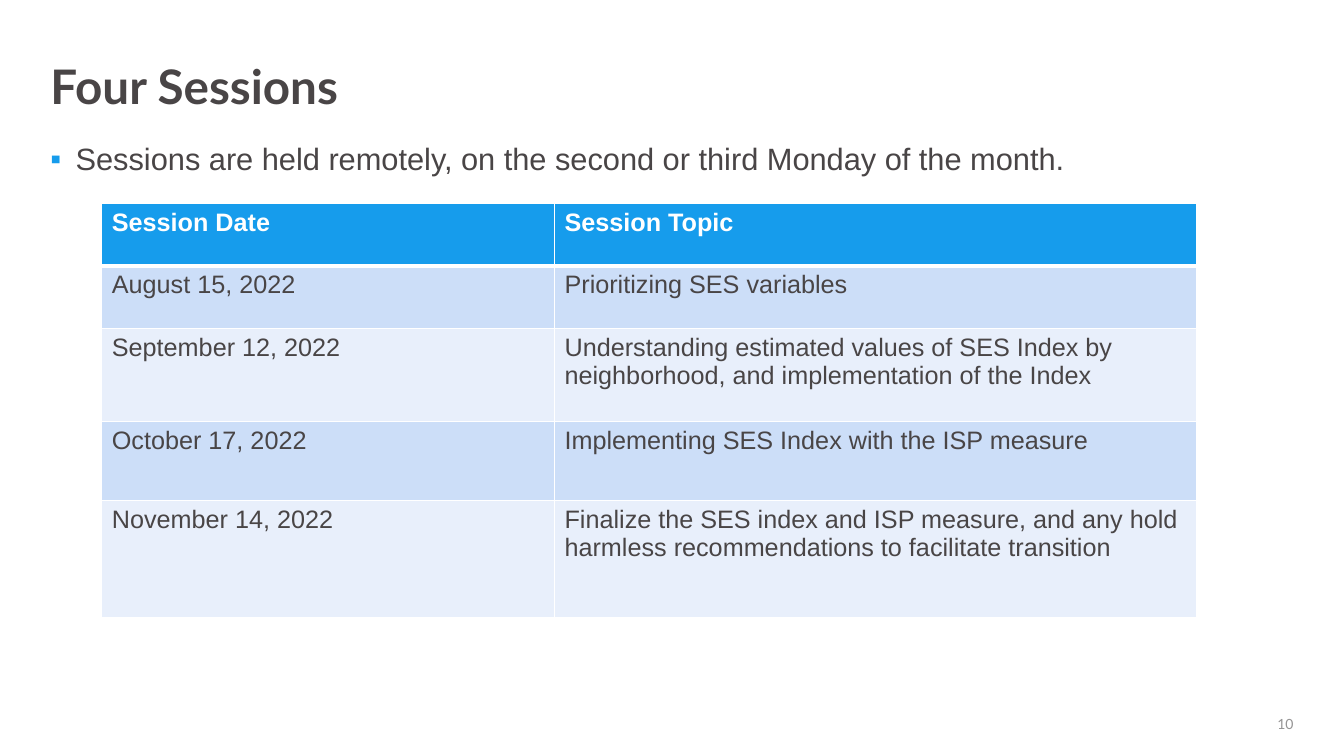
import pptx
import pptx.dml.color
import pptx.enum.text
import pptx.oxml
import pptx.oxml.ns
import pptx.util
from pptx.util import Inches

COLORS = {
    "accent": "169CEC",
    "text": "494546",
    "muted": "959494",
    "white": "FFFFFF",
    "band_dark": "CCDEF8",
    "band_light": "E8EFFB",
}
ALIGN = pptx.enum.text.PP_ALIGN
ANCHOR = pptx.enum.text.MSO_ANCHOR
SESSIONS = [
    ("Session Date", "Session Topic"),
    ("August 15, 2022", "Prioritizing SES variables"),
    ("September 12, 2022",
     "Understanding estimated values of SES Index by neighborhood, "
     "and implementation of the Index"),
    ("October 17, 2022", "Implementing SES Index with the ISP measure"),
    ("November 14, 2022",
     "Finalize the SES index and ISP measure, and any hold harmless "
     "recommendations to facilitate transition"),
]
COLUMN_WIDTHS = [4.49, 6.37]
ROW_HEIGHTS = [0.62, 0.62, 0.92, 0.79, 1.16]


def rgb(name):
    return pptx.dml.color.RGBColor.from_string(COLORS[name])


def drawing_element(xml):
    return pptx.oxml.parse_xml(xml.replace(" ", f' {pptx.oxml.ns.nsdecls("a")} ', 1))


def write_text(frame, text, size, color="text", font="Arial", bold=False,
               align=ALIGN.LEFT, line_spacing=None, after=0, bullet=None):
    frame.word_wrap = True
    paragraph = frame.paragraphs[0]
    paragraph.text = text
    paragraph.alignment = align
    paragraph.line_spacing = line_spacing
    paragraph.space_before = pptx.util.Pt(0)
    paragraph.space_after = pptx.util.Pt(after)
    if bullet:
        properties = paragraph._p.get_or_add_pPr()
        properties.set("marL", str(Inches(0.25)))
        properties.set("indent", str(Inches(-0.25)))
        for xml in (f'<a:buClr ><a:srgbClr val="{COLORS["accent"]}"/></a:buClr>',
                    '<a:buFont typeface="Arial"/>',
                    f'<a:buChar char="{bullet}"/>'):
            properties.append(drawing_element(xml))
    run_font = paragraph.runs[0].font
    run_font.name = font
    run_font.size = pptx.util.Pt(size)
    run_font.bold = bold
    run_font.color.rgb = rgb(color)


def place(shape, box, insets, anchor=ANCHOR.TOP):
    """Move a shape to box (inches) with left, top, right, bottom insets."""
    shape.left, shape.top, shape.width, shape.height = map(Inches, box)
    frame = shape.text_frame
    frame.auto_size = pptx.enum.text.MSO_AUTO_SIZE.NONE
    frame.vertical_anchor = anchor
    (frame.margin_left, frame.margin_top,
     frame.margin_right, frame.margin_bottom) = map(Inches, insets)
    return frame


def add_heading(slide, box):
    frame = place(slide.shapes.title, box, (0, 0.05, 0, 0.05))
    write_text(frame, "Four Sessions", 34, font="Lato", bold=True, line_spacing=0.9)


def add_intro(slide, box):
    frame = place(slide.placeholders[1], box, (0, 0, 0, 0.1))
    write_text(frame,
               "Sessions are held remotely, on the second or third Monday of the month.",
               22, line_spacing=1.08, after=16, bullet="▪")


def set_borders(cell, bottom):
    widths = {"lnL": 1, "lnR": 1, "lnT": 1, "lnB": bottom}
    properties = cell._tc.get_or_add_tcPr()
    for position, (side, width) in enumerate(widths.items()):
        properties.insert(position, drawing_element(
            f'<a:{side} w="{pptx.util.Pt(width)}"><a:solidFill>'
            f'<a:srgbClr val="{COLORS["white"]}"/></a:solidFill></a:{side}>'))


def add_schedule(slide, box):
    schedule = slide.shapes.add_table(
        len(SESSIONS), len(COLUMN_WIDTHS), *map(Inches, box)).table
    for column, width in zip(schedule.columns, COLUMN_WIDTHS):
        column.width = Inches(width)
    for row, height in zip(schedule.rows, ROW_HEIGHTS):
        row.height = Inches(height)
    for row_index, session in enumerate(SESSIONS):
        header = row_index == 0
        band = "band_dark" if row_index % 2 else "band_light"
        for column_index, text in enumerate(session):
            cell = schedule.cell(row_index, column_index)
            cell.fill.solid()
            cell.fill.fore_color.rgb = rgb("accent" if header else band)
            # Adjoining cells share an edge, so the first body row repeats the header rule.
            set_borders(cell, bottom=3 if header else 1)
            if row_index == 1:
                cell._tc.tcPr.find(pptx.oxml.ns.qn("a:lnT")).set(
                    "w", str(pptx.util.Pt(3)))
            write_text(cell.text_frame, text, 18,
                       color="white" if header else "text", bold=header)


def add_page_number(slide, box):
    number = slide.shapes.add_textbox(*map(Inches, box))
    frame = place(number, box, (0, 0, 0, 0), anchor=ANCHOR.MIDDLE)
    write_text(frame, "10", 10, color="muted", font="Lato", align=ALIGN.RIGHT)


def main():
    deck = pptx.Presentation()
    deck.slide_width, deck.slide_height = Inches(13.33), Inches(7.5)
    slide = deck.slides.add_slide(deck.slide_layouts[1])
    slide.background.fill.solid()
    slide.background.fill.fore_color.rgb = rgb("white")
    add_heading(slide, (0.5, 0.58, 12.33, 1.27))
    add_intro(slide, (0.5, 1.36, 11.17, 0.49))
    add_schedule(slide, (1.01, 2.02, sum(COLUMN_WIDTHS), sum(ROW_HEIGHTS)))
    add_page_number(slide, (9.83, 7.07, 3, 0.23))
    deck.save("out.pptx")


if __name__ == "__main__":
    main()
